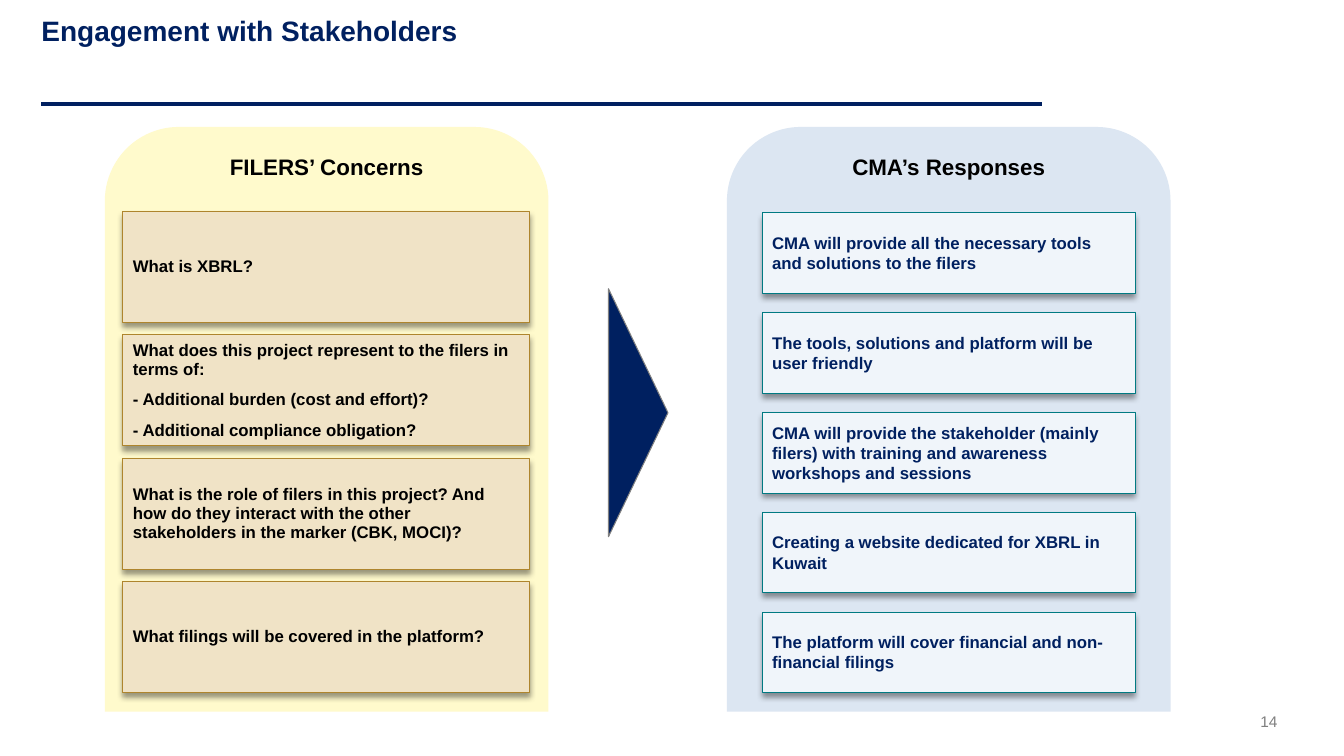
from lxml import etree
from pptx import Presentation
from pptx.dml.color import RGBColor
from pptx.enum import shapes, text
from pptx.oxml import ns
from pptx.util import Inches, Pt

COLOURS = {
    "navy": "002060", "black": "000000", "grey": "808080",
    "concern_panel": "FFFACC", "concern": "F0E3C6", "concern_edge": "AE852D",
    "response_panel": "DCE6F2", "response": "F0F5FA", "response_edge": "007A82",
}
CONCERNS = [
    ["What is XBRL?"],
    ["What does this project represent to the filers in terms of:",
     "- Additional burden (cost and effort)?",
     "- Additional compliance obligation?"],
    ["What is the role of filers in this project? And how do they interact "
     "with the other stakeholders in the marker (CBK, MOCI)?"],
    ["What filings will be covered in the platform?"],
]
RESPONSES = [
    ["CMA will provide all the necessary tools and solutions to the filers"],
    ["The tools, solutions and platform will be user friendly"],
    ["CMA will provide the stakeholder (mainly filers) with training and "
     "awareness workshops and sessions"],
    ["Creating a website dedicated for XBRL in Kuwait"],
    ["The platform will cover financial and non-financial filings"],
]
CARDS_BOTTOM = 6.87


def rgb(name):
    return RGBColor.from_string(COLOURS[name])


def write(frame, lines, size=12, colour="black", bold=True, align="LEFT",
          anchor="MIDDLE", spacing=1.0, after=0, insets=None):
    frame.word_wrap = True
    frame.auto_size = text.MSO_AUTO_SIZE.NONE
    frame.vertical_anchor = text.MSO_ANCHOR[anchor]
    if insets:
        (frame.margin_left, frame.margin_top,
         frame.margin_right, frame.margin_bottom) = map(Inches, insets)
    for index, line in enumerate(lines):
        paragraph = frame.add_paragraph() if index else frame.paragraphs[0]
        paragraph.alignment = text.PP_ALIGN[align]
        paragraph.line_spacing = spacing
        paragraph.space_before = Pt(0)
        paragraph.space_after = Pt(after)
        run = paragraph.add_run()
        run.text = line
        run.font.name = "Arial"
        run.font.size = Pt(size)
        run.font.bold = bold
        run.font.color.rgb = rgb(colour)


def add_block(parent, preset, box, fill, edge=None, edge_width=0.75):
    block = parent.add_shape(shapes.MSO_SHAPE[preset], *map(Inches, box))
    block.shadow.inherit = False
    block.fill.solid()
    block.fill.fore_color.rgb = rgb(fill)
    if edge:
        block.line.color.rgb = rgb(edge)
        block.line.width = Pt(edge_width)
    else:
        block.line.fill.background()
    return block


def add_drop_shadow(card):
    effects = card._element.spPr.find(ns.qn("a:effectLst"))
    drop = etree.SubElement(effects, ns.qn("a:outerShdw"), blurRad=str(Pt(4)),
                            dist=str(Pt(3)), dir="5400000", rotWithShape="0")
    tint = etree.SubElement(drop, ns.qn("a:srgbClr"), val=COLOURS["black"])
    etree.SubElement(tint, ns.qn("a:alpha"), val="40000")


def add_column(slide, heading, left, panel_fill, cards, card_box, fill, edge,
               edge_width, **card_format):
    column = slide.shapes.add_group_shape().shapes
    panel = add_block(column, "ROUND_2_SAME_RECTANGLE",
                      (left, 1.26, 4.4, 5.8), panel_fill)
    write(panel.text_frame, [heading], size=16, align="CENTER", anchor="TOP")
    card_left, top, width, height = card_box
    step = (CARDS_BOTTOM - height - top) / (len(cards) - 1)
    for index, lines in enumerate(cards):
        card = add_block(column, "RECTANGLE",
                         (card_left, top + index * step, width, height),
                         fill, edge, edge_width)
        add_drop_shadow(card)
        write(card.text_frame, lines, **card_format)


def add_title(slide):
    title = slide.shapes.title
    title.left, title.top, title.width, title.height = map(
        Inches, (0.41, 0.14, 9.92, 0.88))
    write(title.text_frame, ["Engagement with Stakeholders"], size=20,
          colour="navy", anchor="TOP", spacing=0.85, insets=(0, 0.04, 0, 0))


def add_title_rule(slide):
    rule = slide.shapes.add_connector(
        shapes.MSO_CONNECTOR.STRAIGHT,
        *map(Inches, (0.41, 1.03, 10.33, 1.03)))
    rule.line.color.rgb = rgb("navy")
    rule.line.width = Pt(3)
    etree.SubElement(rule._element.spPr, ns.qn("a:effectLst"))


def add_page_number(slide):
    number = slide.shapes.add_textbox(*map(Inches, (11.62, 7.06, 1.05, 0.22)))
    write(number.text_frame, ["14"], size=11, colour="grey", bold=False,
          align="RIGHT", anchor="TOP", insets=(0, 0, 0, 0))


def main():
    deck = Presentation()
    deck.slide_width, deck.slide_height = Inches(13.33), Inches(7.5)
    slide = deck.slides.add_slide(deck.slide_layouts.get_by_name("Title Only"))
    add_title(slide)
    add_title_rule(slide)
    add_column(slide, "FILERS’ Concerns", 1.04, "concern_panel", CONCERNS,
               (1.22, 2.1, 4.03, 1.1), "concern", "concern_edge", 0.75,
               spacing=0.95, after=8)
    add_column(slide, "CMA’s Responses", 7.21, "response_panel", RESPONSES,
               (7.56, 2.11, 3.7, 0.8), "response", "response_edge", 0.25,
               colour="navy")
    arrow = add_block(slide.shapes, "ISOSCELES_TRIANGLE",
                      (5.1, 3.8, 2.46, 0.59), "navy", "grey")
    arrow.rotation = 90
    add_page_number(slide)
    deck.save("out.pptx")


if __name__ == "__main__":
    main()
